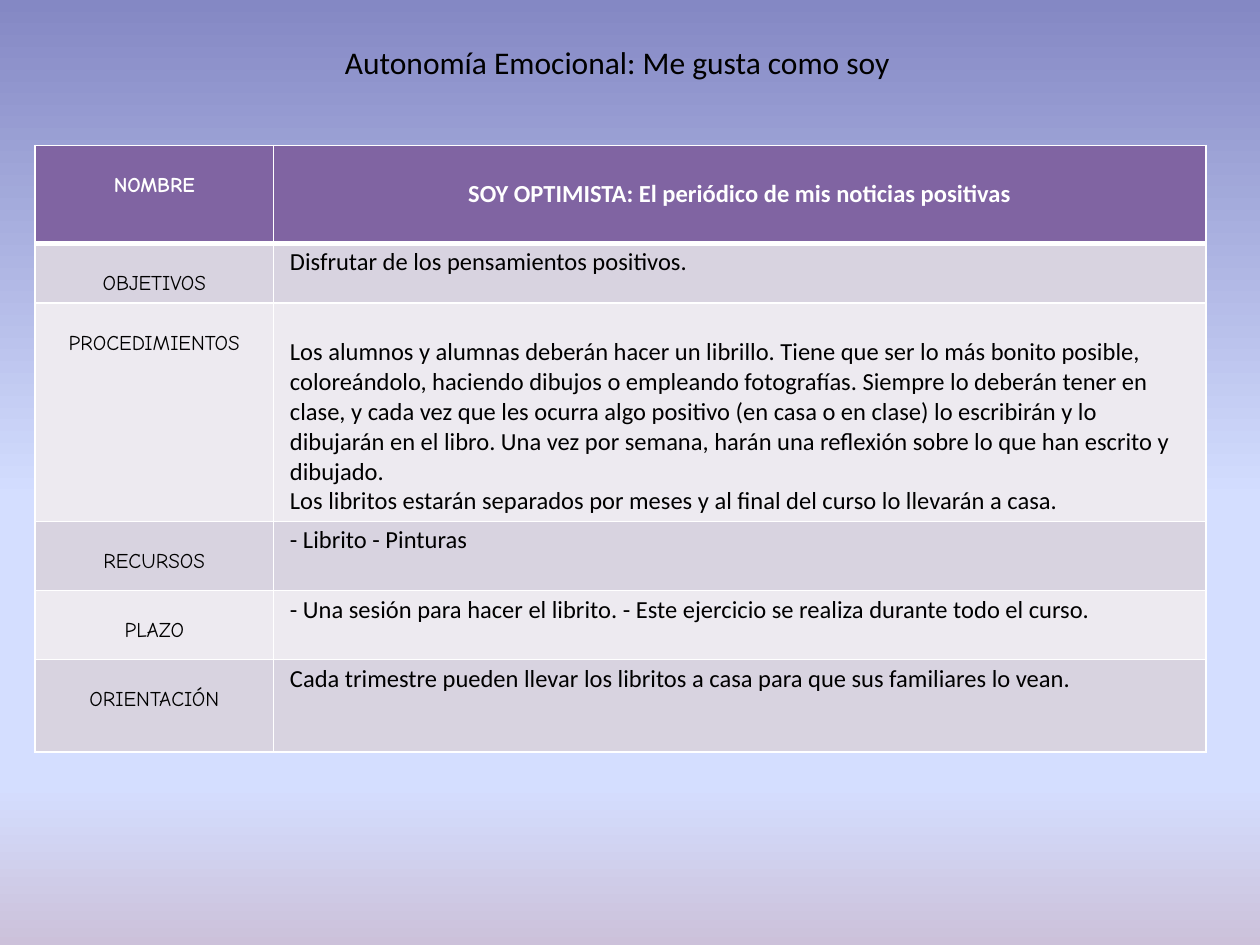
from copy import deepcopy

from lxml.etree import SubElement
from pptx import Presentation
from pptx.dml.color import RGBColor
from pptx.enum.text import MSO_ANCHOR, PP_ALIGN
from pptx.oxml.ns import qn
from pptx.util import Pt

# Content
TITLE = "Autonomía Emocional: Me gusta como soy"
ACTIVITY = [  # label, paragraphs, row height
    ("NOMBRE", ["SOY OPTIMISTA: El periódico de mis noticias positivas"], 56),
    ("OBJETIVOS", ["Disfrutar de los pensamientos positivos."], 34.3),
    ("PROCEDIMIENTOS", [
        "Los alumnos y alumnas deberán hacer un librillo. Tiene que ser lo más bonito "
        "posible, coloreándolo, haciendo dibujos o empleando fotografías. Siempre lo "
        "deberán tener en clase, y cada vez que les ocurra algo positivo (en casa o en "
        "clase) lo escribirán y lo dibujarán en el libro. Una vez por semana, harán una "
        "reflexión sobre lo que han escrito y dibujado.",
        "Los libritos estarán separados por meses y al final del curso lo llevarán a casa.",
    ], 124.6),
    ("RECURSOS", ["- Librito - Pinturas"], 39.5),
    ("PLAZO", ["- Una sesión para hacer el librito. - Este ejercicio se realiza durante "
               "todo el curso."], 39.5),
    ("ORIENTACIÓN", ["Cada trimestre pueden llevar los libritos a casa para que sus "
                     "familiares lo vean."], 53),
]
COLUMN_WIDTHS = (136.3, 532.8)
SKY = [(0, "8488C4"), (0.53, "D4DEFF"), (0.83, "D4DEFF"), (1, "CCC1DA")]
HEADER_FILL, BAND_FILLS = "8064A2", ("EDEAF0", "D8D3E0")
INSET, LABEL_TOP, BODY_TOP = 2.5, 16.3, 19.6
LABEL_FONT = {"name": "Comic Neue", "size": Pt(12)}
BODY_FONT = {"name": "Calibri", "size": Pt(14)}
TITLE_FONT = {"name": "Calibri", "size": Pt(18)}


def color(hex_value):
    return RGBColor.from_string(hex_value)


def write(frame, paragraphs, font, text_color, align=PP_ALIGN.LEFT):
    for index, text in enumerate(paragraphs):
        paragraph = frame.add_paragraph() if index else frame.paragraphs[0]
        paragraph.alignment = align
        run = paragraph.add_run()
        run.text = text
        for name, value in font.items():
            setattr(run.font, name, value)
        run.font.color.rgb = color(text_color)


def add_borders(cell, bottom_width):
    properties = cell._tc.get_or_add_tcPr()
    widths = {"a:lnL": 1, "a:lnR": 1, "a:lnT": 1, "a:lnB": bottom_width}
    for position, (tag, width) in enumerate(widths.items()):
        line = SubElement(properties, qn(tag), w=str(Pt(width)))
        fill = SubElement(line, qn("a:solidFill"))
        SubElement(fill, qn("a:srgbClr"), val="FFFFFF")
        properties.insert(position, line)  # borders precede the fill


def paint_sky(slide):
    fill = slide.background.fill
    fill.gradient()
    fill.gradient_angle = 270
    stops = next(slide._element.iter(qn("a:gsLst")))
    while len(stops) < len(SKY):
        stops.append(deepcopy(stops[0]))
    for stop, (position, hex_value) in zip(fill.gradient_stops, SKY):
        stop.position = position
        stop.color.rgb = color(hex_value)


def add_activity(slide):
    heights = [height for _, _, height in ACTIVITY]
    table = slide.shapes.add_table(
        len(ACTIVITY), len(COLUMN_WIDTHS), Pt(20), Pt(83),
        Pt(sum(COLUMN_WIDTHS)), Pt(sum(heights))).table
    for column, width in zip(table.columns, COLUMN_WIDTHS):
        column.width = Pt(width)
    for index, (label, body, height) in enumerate(ACTIVITY):
        header = index == 0
        table.rows[index].height = Pt(height)
        text_color = "FFFFFF" if header else "000000"
        body_top = BODY_TOP if header or len(body) > 1 else INSET
        body_align = PP_ALIGN.CENTER if header else PP_ALIGN.LEFT
        parts = [([label], LABEL_FONT, PP_ALIGN.CENTER, LABEL_TOP),
                 (body, BODY_FONT, body_align, body_top)]
        for cell, (texts, font, align, top) in zip(table.rows[index].cells, parts):
            layout = {"margin_left": Pt(9.4), "margin_right": Pt(9.4),
                      "margin_top": Pt(top), "margin_bottom": Pt(INSET),
                      "vertical_anchor": MSO_ANCHOR.TOP}
            for name, value in layout.items():
                setattr(cell, name, value)
            cell.fill.solid()
            cell.fill.fore_color.rgb = color(HEADER_FILL if header else BAND_FILLS[index % 2])
            add_borders(cell, 3 if header else 1)
            write(cell.text_frame, texts, {**font, "bold": header}, text_color, align)


def main():
    presentation = Presentation()
    presentation.slide_width, presentation.slide_height = Pt(720), Pt(540)
    slide = presentation.slides.add_slide(presentation.slide_layouts[6])
    paint_sky(slide)
    add_activity(slide)
    # Title
    title = slide.shapes.add_textbox(Pt(190), Pt(21), Pt(351), Pt(29)).text_frame
    title.word_wrap = True
    write(title, [TITLE], TITLE_FONT, "000000")
    presentation.save("out.pptx")


if __name__ == "__main__":
    main()
